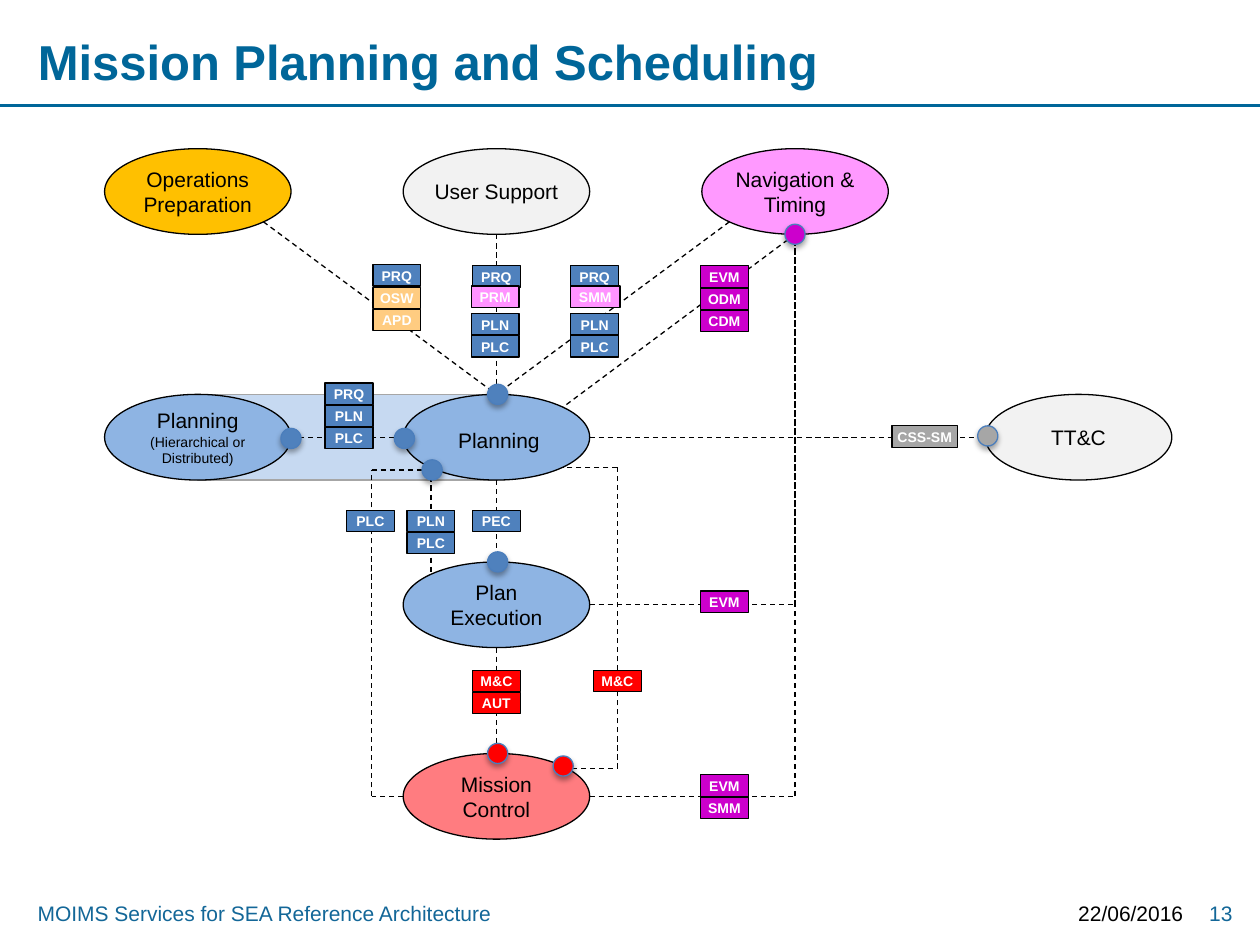
"""Build the mission planning and scheduling service diagram slide."""
from dataclasses import dataclass
from itertools import pairwise

from lxml.etree import SubElement
from pptx import Presentation
from pptx.dml.color import RGBColor
from pptx.enum.dml import MSO_LINE
from pptx.enum.shapes import MSO_CONNECTOR, MSO_SHAPE
from pptx.enum.text import MSO_ANCHOR, MSO_AUTO_SIZE, PP_ALIGN
from pptx.oxml.ns import qn
from pptx.util import Inches, Pt

BLACK, WHITE = "000000", "FFFFFF"
TEAL, FOOTER_TEAL = "006699", "136798"
BLUE, PALE_BLUE, LIGHT_BLUE = "4F81BD", "C6D9F1", "8EB4E3"
PURPLE, PINK, ORANGE, RED, GREY = "CC00CC", "FF93FF", "FFCC81", "FF0000", "A6A6A6"
DOT_EDGE, SILVER = "4B7EBC", "F2F2F2"
NODE_W, NODE_H = 1.48, 0.68
BADGE_H, BADGE_PITCH = 0.17, 0.175
DOT_SIZE = 0.16
COL_LEFT, COL_MID, COL_RIGHT = 0.83, 3.2, 5.57
ROW_TOP, ROW_PLANNING = 1.18, 3.13
NODE_INSETS = (0, 0.05, 0, 0.05)


@dataclass(frozen=True)
class Node:
    """An ellipse for one mission function."""
    label: str
    left: float
    top: float
    fill: str
    note: str = ""
    insets: tuple[float, ...] = NODE_INSETS


@dataclass(frozen=True)
class Badges:
    """A downward stack of service codes sharing one colour."""
    codes: str
    left: float
    top: float
    fill: str = BLUE
    width: float = 0.38


@dataclass(frozen=True)
class Dot:
    """A service provider port given by its centre."""
    x: float
    y: float
    fill: str = BLUE


NODES = [
    Node("Planning", COL_MID, ROW_PLANNING, LIGHT_BLUE, insets=(0.04, 0.04, 0, 0)),
    Node("Plan Execution", COL_MID, 4.46, LIGHT_BLUE),
    Node("Navigation & Timing", COL_RIGHT, ROW_TOP, "FF99FF"),
    Node("Mission\nControl", COL_MID, 5.98, "FF7C80"),
    Node("Operations\nPreparation", COL_LEFT, ROW_TOP, "FFC000"),
    Node("User Support", COL_MID, ROW_TOP, SILVER),
    Node("TT&C", 7.82, ROW_PLANNING, SILVER),
    Node("Planning", COL_LEFT, ROW_PLANNING, LIGHT_BLUE, "(Hierarchical or Distributed)"),
]

ROUTES = [
    [(3.94, 1.86), (3.94, 3.13)],
    [(2.09, 1.76), (3.94, 3.13)],
    [(5.79, 1.76), (3.94, 3.13)],
    [(4.68, 3.47), (7.82, 3.47)],
    [(6.31, 1.86), (4.47, 3.23)],
    [(3.94, 3.81), (3.94, 4.46)],
    [(3.94, 5.14), (3.94, 5.98)],
    [(4.68, 4.8), (6.31, 4.8), (6.31, 1.86)],
    [(3.2, 3.47), (2.31, 3.47)],
    [(4.68, 6.32), (6.31, 6.32), (6.31, 1.86)],
    [(3.42, 3.71), (3.42, 4.56)],
    [(3.2, 6.32), (2.95, 6.32), (2.95, 3.73), (3.35, 3.73)],
    [(4.9, 5.32), (4.9, 3.71), (4.47, 3.71)],
    [(4.47, 6.1), (4.9, 6.1), (4.9, 5.49)],
]

DOTS = [
    Dot(3.95, 3.13), Dot(7.84, 3.46, GREY), Dot(3.95, 5.98, RED),
    Dot(3.95, 4.46), Dot(6.31, 1.86, PURPLE), Dot(2.31, 3.48),
    Dot(3.21, 3.48), Dot(3.43, 3.73), Dot(4.47, 6.08, RED),
]

BADGES = [
    Badges("PRQ", 2.96, 2.1), Badges("OSW APD", 2.96, 2.28, ORANGE),
    Badges("PRQ", 3.75, 2.11), Badges("PRM", 3.74, 2.27, PINK),
    Badges("PLN PLC", 3.74, 2.49),
    Badges("PRQ", 4.53, 2.11), Badges("SMM", 4.53, 2.27, PINK, 0.39),
    Badges("PLN PLC", 4.53, 2.49),
    Badges("EVM ODM CDM", 5.56, 2.11, PURPLE),
    Badges("PRQ PLN PLC", 2.58, 3.04),
    Badges("CSS-SM", 7.08, 3.38, GREY, 0.52),
    Badges("PLC", 2.75, 4.05), Badges("PLN PLC", 3.23, 4.05), Badges("PEC", 3.75, 4.05),
    Badges("EVM", 5.56, 4.69, PURPLE), Badges("EVM SMM", 5.56, 6.15, PURPLE),
    Badges("M&C AUT", 3.75, 5.32, RED), Badges("M&C", 4.71, 5.32, RED),
]


def apply(target, formats: dict) -> None:
    """Set every attribute named in formats."""
    for name, value in formats.items():
        setattr(target, name, value)


def paint(color_format, hex_color: str) -> None:
    """Give a colour format an RGB value."""
    color_format.rgb = RGBColor.from_string(hex_color)


def style_font(font, size: float, color: str, bold: bool = False) -> None:
    """Format a font in the slide's typeface."""
    apply(font, {"name": "Arial", "size": Pt(size), "bold": bold})
    paint(font.color, color)


def set_insets(frame, insets: tuple[float, ...]) -> None:
    """Set left, top, right and bottom insets of a text frame."""
    sides = ("margin_left", "margin_top", "margin_right", "margin_bottom")
    apply(frame, dict(zip(sides, map(Inches, insets))))


def add_outline(slide, preset, left: float, top: float, width: float, height: float,
                fill: str, edge: str = BLACK):
    """Add a filled preset shape with a thin edge and no shadow."""
    shape = slide.shapes.add_shape(preset, *map(Inches, (left, top, width, height)))
    shape.shadow.inherit = False
    shape.fill.solid()
    paint(shape.fill.fore_color, fill)
    shape.line.width = Pt(0.75)
    paint(shape.line.color, edge)
    return shape


def add_node(slide, node: Node) -> None:
    """Draw a function ellipse with its label."""
    ellipse = add_outline(slide, MSO_SHAPE.OVAL, node.left, node.top, NODE_W, NODE_H, node.fill)
    frame = ellipse.text_frame
    apply(frame, {"word_wrap": True, "vertical_anchor": MSO_ANCHOR.MIDDLE})
    set_insets(frame, node.insets)
    label = frame.paragraphs[0]
    apply(label, {"text": node.label, "alignment": PP_ALIGN.CENTER})
    for part in label.runs:
        style_font(part.font, 12, BLACK)
    if node.note:
        label.add_line_break()
        note = label.add_run()
        note.text = node.note
        style_font(note.font, 8, BLACK)


def add_badges(slide, stack: Badges) -> None:
    """Draw a stack of code badges."""
    for row, code in enumerate(stack.codes.split()):
        badge = add_outline(slide, MSO_SHAPE.RECTANGLE, stack.left,
                            stack.top + row * BADGE_PITCH, stack.width, BADGE_H, stack.fill)
        frame = badge.text_frame
        apply(frame, {"text": code, "word_wrap": True, "vertical_anchor": MSO_ANCHOR.TOP,
                      "auto_size": MSO_AUTO_SIZE.SHAPE_TO_FIT_TEXT})
        set_insets(frame, (0.02,) * 4)
        frame.paragraphs[0].alignment = PP_ALIGN.CENTER
        style_font(frame.paragraphs[0].runs[0].font, 8, WHITE, bold=True)


def add_dot(slide, dot: Dot) -> None:
    """Draw a port with a soft shadow below it."""
    port = add_outline(slide, MSO_SHAPE.OVAL, dot.x - DOT_SIZE / 2, dot.y - DOT_SIZE / 2,
                       DOT_SIZE, DOT_SIZE, dot.fill, DOT_EDGE)
    effects = port._element.spPr.find(qn("a:effectLst"))
    shadow = SubElement(effects, qn("a:outerShdw"), blurRad=str(Pt(3.1)), dist=str(Pt(1.8)),
                        dir="5400000", rotWithShape="0")
    tint = SubElement(shadow, qn("a:srgbClr"), val=BLACK)
    SubElement(tint, qn("a:alpha"), val="35000")


def add_route(slide, points: list[tuple[float, float]], color: str = BLACK,
              width: float = 0.75, dash=MSO_LINE.DASH) -> None:
    """Draw straight connectors through the given points."""
    for start, end in pairwise(points):
        link = slide.shapes.add_connector(MSO_CONNECTOR.STRAIGHT, *map(Inches, start + end))
        apply(link.line, {"width": Pt(width), "dash_style": dash})
        paint(link.line.color, color)
        SubElement(link._element.spPr, qn("a:effectLst"))


def add_footer(slide, text: str, left: float, top: float, width: float, height: float,
               color: str, alignment=PP_ALIGN.RIGHT) -> None:
    """Add one footer text."""
    footer = slide.shapes.add_textbox(*map(Inches, (left, top, width, height)))
    apply(footer.text_frame, {"text": text, "word_wrap": True})
    footer.text_frame.paragraphs[0].alignment = alignment
    style_font(footer.text_frame.paragraphs[0].runs[0].font, 12, color)


def add_title(slide, text: str) -> None:
    """Place and format the title placeholder."""
    title = slide.shapes.title
    apply(title, dict(zip(("left", "top", "width", "height"),
                          map(Inches, (0.2, 0.21, 7.95, 0.55)))))
    apply(title.text_frame, {"text": text, "word_wrap": True,
                             "vertical_anchor": MSO_ANCHOR.MIDDLE,
                             "auto_size": MSO_AUTO_SIZE.NONE})
    title.text_frame.paragraphs[0].alignment = PP_ALIGN.LEFT
    style_font(title.text_frame.paragraphs[0].runs[0].font, 28, TEAL, bold=True)


def main() -> None:
    """Assemble and save the slide."""
    deck = Presentation()
    apply(deck, {"slide_width": Inches(10), "slide_height": Inches(7.5)})
    slide = deck.slides.add_slide(deck.slide_layouts[5])
    add_title(slide, "Mission Planning and Scheduling")
    add_route(slide, [(0, 0.84), (10, 0.84)], TEAL, 1.5, MSO_LINE.SOLID)
    add_footer(slide, "MOIMS Services for SEA Reference Architecture",
               0.2, 7.1, 8.11, 0.3, FOOTER_TEAL, PP_ALIGN.LEFT)
    add_footer(slide, "22/06/2016", 8.39, 7.1, 1.1, 0.3, BLACK)
    add_footer(slide, "13", 9.41, 7.1, 0.47, 0.3, FOOTER_TEAL)
    add_outline(slide, MSO_SHAPE.RECTANGLE, 1.57, ROW_PLANNING, 2.38, NODE_H, PALE_BLUE, GREY)
    for draw, parts in ((add_node, NODES), (add_route, ROUTES),
                        (add_dot, DOTS), (add_badges, BADGES)):
        for part in parts:
            draw(slide, part)
    deck.save("out.pptx")


if __name__ == "__main__":
    main()
